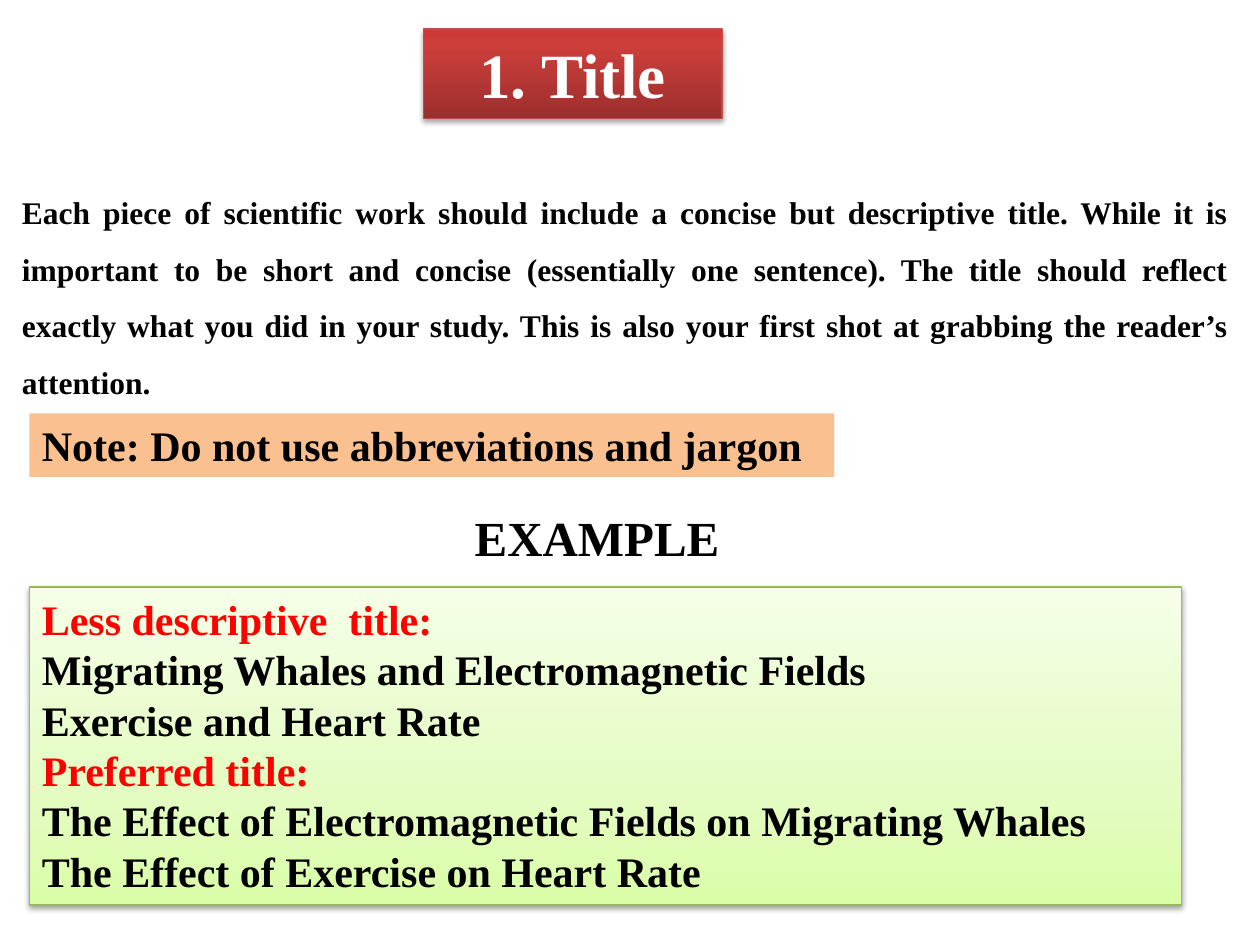
from lxml.etree import SubElement
from pptx import Presentation
from pptx.dml.color import RGBColor
from pptx.enum.shapes import MSO_SHAPE as Shape
from pptx.enum.text import MSO_ANCHOR as Anchor, MSO_AUTO_SIZE as AutoSize, PP_ALIGN as Align
from pptx.oxml.ns import qn
from pptx.util import Pt

COLORS = {
    "black": "000000",
    "white": "FFFFFF",
    "red": "FF0000",
    "title line": "BF4C48",
    "note": "FAC090",
    "example line": "98B955",
}
TITLE_STOPS = [(0, "9C2F2D"), (80, "CB3E3A"), (100, "CE3B37")]
EXAMPLE_STOPS = [(0, "DAFDA7"), (35, "E4FCC2"), (100, "F5FFE7")]


def write(shape, lines, size, align, anchor=Anchor.TOP, wrap=True):
    """Fill a shape with bold lines, given as (text, color name)."""
    frame = shape.text_frame
    frame.auto_size = AutoSize.NONE
    frame.word_wrap = wrap
    frame.vertical_anchor = anchor
    frame.text = "\n".join(text for text, _ in lines)
    for paragraph, (_, color) in zip(frame.paragraphs, lines):
        paragraph.alignment = align
        paragraph.font.name = "Times New Roman"
        paragraph.font.size = Pt(size)
        paragraph.font.bold = True
        paragraph.font.color.rgb = RGBColor.from_string(COLORS[color])


def style_panel(shape, stops, line, distance, opacity):
    """Give a shape an upward gradient, a thin outline and a soft shadow."""
    shape.fill.gradient()
    shape.fill.gradient_angle = 90
    properties = shape._element.spPr
    stop_list = properties.find(".//" + qn("a:gsLst"))
    stop_list.clear()
    for position, color in stops:
        stop = SubElement(stop_list, qn("a:gs"), pos=str(position * 1000))
        SubElement(stop, qn("a:srgbClr"), val=color)
    shape.line.color.rgb = RGBColor.from_string(COLORS[line])
    shape.line.width = Pt(0.75)
    shape.shadow.inherit = False
    shadow = SubElement(
        properties.find(qn("a:effectLst")), qn("a:outerShdw"),
        blurRad=str(Pt(3.1)), dist=str(Pt(distance)), dir="5400000", rotWithShape="0")
    color = SubElement(shadow, qn("a:srgbClr"), val=COLORS["black"])
    SubElement(color, qn("a:alpha"), val=str(opacity * 1000))


presentation = Presentation()
presentation.slide_width, presentation.slide_height = Pt(720), Pt(540)
slide = presentation.slides.add_slide(presentation.slide_layouts[5])
shapes = slide.shapes

# Title
title = shapes.title
title.left, title.top, title.width, title.height = Pt(241.9), Pt(16.6), Pt(170.7), Pt(51.1)
style_panel(title, TITLE_STOPS, "title line", distance=1.8, opacity=35)
write(title, [("1. Title", "white")], 36, Align.CENTER, Anchor.MIDDLE)

# Explanation
explanation = shapes.add_textbox(Pt(5.5), Pt(96), Pt(703.5), Pt(170.6))
write(explanation, [(
    "Each piece of scientific work should include a concise but descriptive title. "
    "While it is important to be short and concise (essentially one sentence). "
    "The title should reflect exactly what you did in your study. "
    "This is also your first shot at grabbing the reader’s attention.", "black")],
    18, Align.JUSTIFY)
explanation.text_frame.paragraphs[0].line_spacing = 1.5

# Examples
examples = shapes.add_shape(Shape.RECTANGLE, Pt(16.8), Pt(335.5), Pt(658.3), Pt(181.7))
style_panel(examples, EXAMPLE_STOPS, "example line", distance=1.6, opacity=38)
write(examples, [
    ("Less descriptive  title:", "red"),
    ("Migrating Whales and Electromagnetic Fields", "black"),
    ("Exercise and Heart Rate", "black"),
    ("Preferred title:", "red"),
    ("The Effect of Electromagnetic Fields on Migrating Whales", "black"),
    ("The Effect of Exercise on Heart Rate", "black"),
], 24, Align.JUSTIFY)

# Note
note = shapes.add_shape(Shape.RECTANGLE, Pt(16.8), Pt(236.2), Pt(459.8), Pt(36.3))
note.shadow.inherit = False
note.fill.solid()
note.fill.fore_color.rgb = RGBColor.from_string(COLORS["note"])
note.line.fill.background()
write(note, [("Note: Do not use abbreviations and jargon", "black")], 24, Align.LEFT)

# Example heading
heading = shapes.add_textbox(Pt(264.2), Pt(286.6), Pt(155.5), Pt(41))
write(heading, [("EXAMPLE", "black")], 28, Align.LEFT, wrap=False)

presentation.save("out.pptx")
